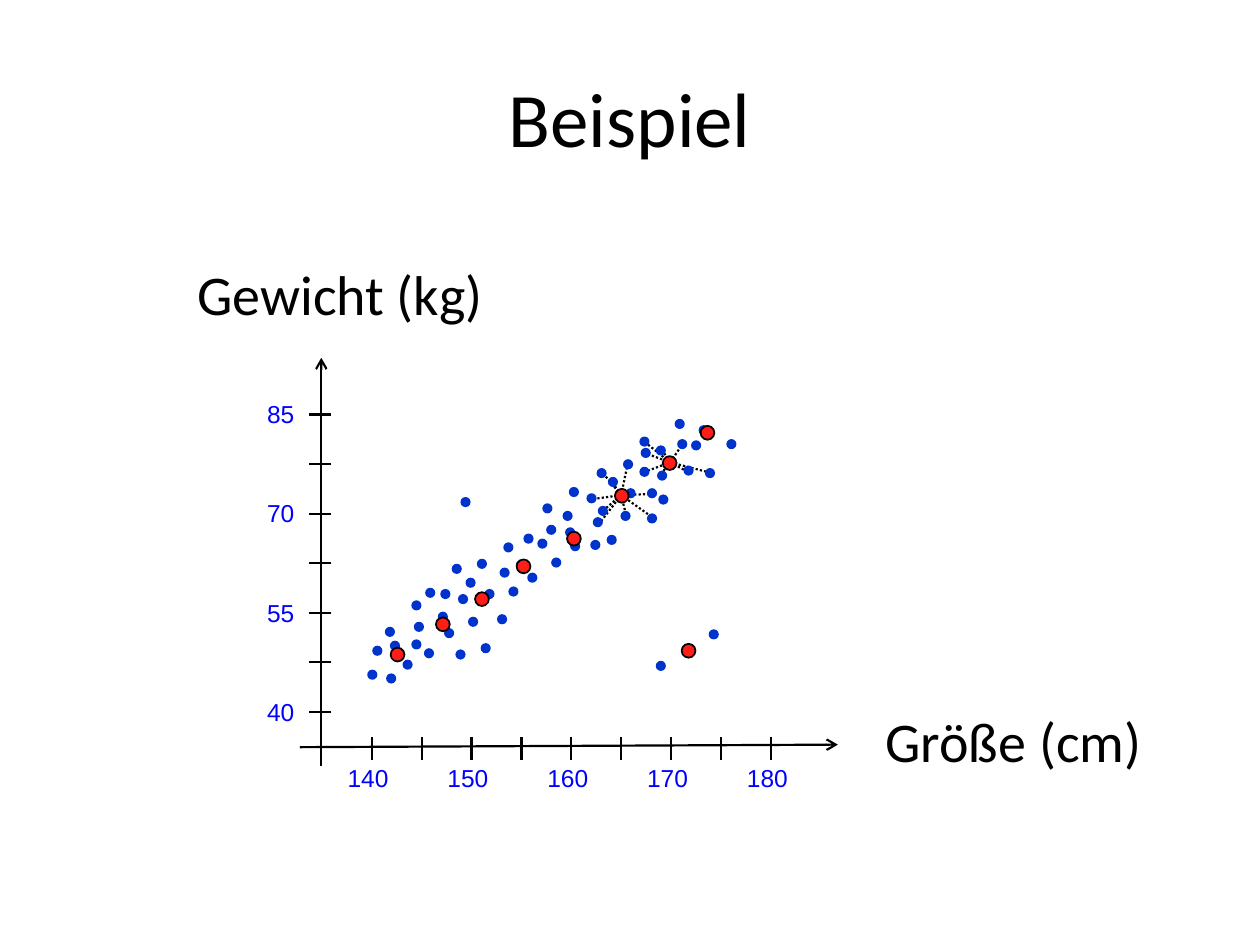
from typing import NamedTuple

from lxml.etree import SubElement
from pptx import Presentation
from pptx.dml.color import RGBColor
from pptx.enum.dml import MSO_LINE
from pptx.enum.shapes import MSO_CONNECTOR, MSO_SHAPE
from pptx.enum.text import MSO_ANCHOR, MSO_AUTO_SIZE, PP_ALIGN
from pptx.oxml.ns import qn
from pptx.util import Cm, Pt

COLORS = {"black": "000000", "label": "0000FF", "dot": "0033CC", "center": "FF1D17"}


class Point(NamedTuple):
    x: float
    y: float


class Marker(NamedTuple):
    size: float
    fill: str
    outline: str
    outline_width: float


class TextStyle(NamedTuple):
    size: float
    font: str
    color: str
    align: PP_ALIGN


class Label(NamedTuple):
    text: str
    left: float
    top: float
    width: float
    height: float
    indent: float = 0.1


class Star(NamedTuple):
    hub: Point
    neighbours: list[tuple[float, float]]


TITLE = TextStyle(44, "Calibri", "black", PP_ALIGN.CENTER)
AXIS_NAME = TextStyle(32, "Calibri", "black", PP_ALIGN.CENTER)
TICK_LABEL = TextStyle(14, "Arial", "label", PP_ALIGN.LEFT)
DATA_MARKER = Marker(0.07, "dot", "dot", 0.75)
CENTER_MARKER = Marker(0.11, "center", "black", 1)

# All positions below are in inches; top-left corners for the markers
STARS = [
    Star(Point(5.32, 3.67), [
        (5.42, 3.52), (5.12, 3.51), (5.13, 3.74), (5.24, 3.77),
        (5.13, 3.6), (5.63, 3.75), (5.45, 3.74), (5.26, 3.58)]),
    Star(Point(4.93, 3.93), [
        (4.76, 4.15), (4.97, 4.09), (4.79, 4.05), (4.98, 3.69), (4.71, 3.96),
        (4.79, 3.76), (4.86, 3.83), (5.18, 3.92), (5.17, 4.1)]),
]
DATA = [
    (4.16, 4.24), (4.19, 4.55), (4.47, 4.06), (4.83, 3.79), (4.71, 4.11),
    (2.92, 5.32), (4.53, 4.3), (4.66, 3.92), (5.09, 3.56), (4.97, 3.88),
    (4.75, 4.02), (3.79, 4.44), (3.85, 4.68), (4.1, 4.45), (5.21, 3.54),
    (5.43, 3.7), (5.22, 3.74), (5.49, 3.5), (3.5, 4.68), (4.38, 4.43),
    (4.82, 4.25), (5.23, 3.93), (3.48, 4.86), (4.34, 4.17), (3.72, 4.9),
    (4.93, 4.06), (3.1, 5.09), (3.29, 4.94), (3.06, 4.98), (3.2, 5.24),
    (3.53, 4.99), (3.97, 4.51), (3.37, 5.15), (4.04, 4.66), (4, 4.31),
    (3.7, 4.59), (4.27, 4.28), (4.49, 4.19), (4.95, 3.65), (5.14, 4.08),
    (5.14, 3.88), (5.36, 3.33), (5.6, 3.72), (3.62, 5.16), (3.82, 5.11),
    (3.95, 4.88), (3.59, 4.48), (3.27, 4.77), (3.64, 4.72), (4.52, 3.87),
    (4.69, 4.29), (5.08, 3.47), (5.38, 3.49), (4.31, 4), (4.74, 3.72),
    (3.66, 3.95), (5.21, 5.25), (5.63, 5), (5.77, 3.49), (2.96, 5.13),
    (3.38, 4.67), (5.08, 3.71), (3.27, 5.08), (3.07, 5.35), (5.55, 3.38),
]
CENTERS = [
    (3.1, 5.14), (3.46, 4.9), (3.77, 4.7), (4.1, 4.44), (4.5, 4.22),
    (4.88, 3.88), (5.26, 3.62), (5.56, 3.38), (5.41, 5.11),
]


def length(inches: float) -> Cm:
    return Cm(inches * 2.54)


def rgb(name: str) -> RGBColor:
    return RGBColor.from_string(COLORS[name])


def write(text_frame, text: str, style: TextStyle) -> None:
    paragraph = text_frame.paragraphs[0]
    paragraph.alignment = style.align
    run = paragraph.add_run()
    run.text = text
    run.font.size = Pt(style.size)
    run.font.name = style.font
    run.font.color.rgb = rgb(style.color)


def add_label(shapes, label: Label, style: TextStyle, grow: bool = False) -> None:
    box = shapes.add_textbox(*map(length, label[1:5]))
    box.text_frame.word_wrap = True
    box.text_frame.margin_left = length(label.indent)
    if grow:
        box.text_frame.auto_size = MSO_AUTO_SIZE.SHAPE_TO_FIT_TEXT
    write(box.text_frame, label.text, style)


def add_line(shapes, start: Point, end: Point, dotted: bool = False, arrow: bool = False) -> None:
    connector = shapes.add_connector(MSO_CONNECTOR.STRAIGHT, *map(length, (*start, *end)))
    connector.line.color.rgb = rgb("black")
    connector.line.width = Pt(1.25)
    if dotted:
        connector.line.dash_style = MSO_LINE.ROUND_DOT
    properties = connector._element.spPr
    if arrow:
        SubElement(properties.find(qn("a:ln")), qn("a:tailEnd"), type="arrow")
    SubElement(properties, qn("a:effectLst"))


def add_markers(shapes, corners: list[tuple[float, float]], marker: Marker) -> None:
    group = shapes.add_group_shape()
    for corner in corners:
        shape = group.shapes.add_shape(
            MSO_SHAPE.OVAL, *map(length, (*corner, marker.size, marker.size)))
        shape.shadow.inherit = False
        shape.fill.solid()
        shape.fill.fore_color.rgb = rgb(marker.fill)
        shape.line.color.rgb = rgb(marker.outline)
        shape.line.width = Pt(marker.outline_width)


def add_axes(shapes) -> None:
    add_line(shapes, Point(2.55, 6.08), Point(2.55, 2.84), arrow=True)
    add_line(shapes, Point(2.38, 5.93), Point(6.65, 5.91), arrow=True)

    # Ticks, with a label at every second one
    x_step, y_step = (6.12 - 2.95) / 8, (5.65 - 3.29) / 6
    for index in range(9):
        x = 2.95 + index * x_step
        add_line(shapes, Point(x, 5.85), Point(x, 6.03))
        if index % 2 == 0:
            label = Label(str(140 + 5 * index), x - 0.29, 6.01, 0.59, 0.33)
            add_label(shapes, label, TICK_LABEL, grow=True)
    for index in range(7):
        y = 5.65 - index * y_step
        add_line(shapes, Point(2.63, y), Point(2.45, y))
        if index % 2 == 0:
            label = Label(str(40 + index * 15 // 2), 1.91, y - 0.17, 0.59, 0.33, 0.21)
            add_label(shapes, label, TICK_LABEL, grow=True)


def main() -> None:
    presentation = Presentation()
    presentation.slide_width, presentation.slide_height = length(10), length(7.5)
    slide = presentation.slides.add_slide(presentation.slide_layouts[5])
    shapes = slide.shapes

    # Title
    title = shapes.title
    title.left, title.top, title.width, title.height = map(length, (0.5, 0.3, 9, 1.25))
    title.text_frame.vertical_anchor = MSO_ANCHOR.MIDDLE
    write(title.text_frame, "Beispiel", TITLE)

    # Dotted links from two centers to their neighbours
    for star in STARS:
        group = shapes.add_group_shape()
        for neighbour in star.neighbours:
            add_line(group.shapes, star.hub, Point(*neighbour), dotted=True)

    # Axes and their names
    add_label(shapes, Label("Größe (cm)", 6.76, 5.56, 2.57, 0.69), AXIS_NAME)
    add_label(shapes, Label("Gewicht (kg)", 1.4, 2.01, 2.6, 0.72), AXIS_NAME)
    add_axes(shapes)

    # Data points and cluster centers
    add_markers(shapes, DATA, DATA_MARKER)
    add_markers(shapes, CENTERS, CENTER_MARKER)

    presentation.save("out.pptx")


if __name__ == "__main__":
    main()
